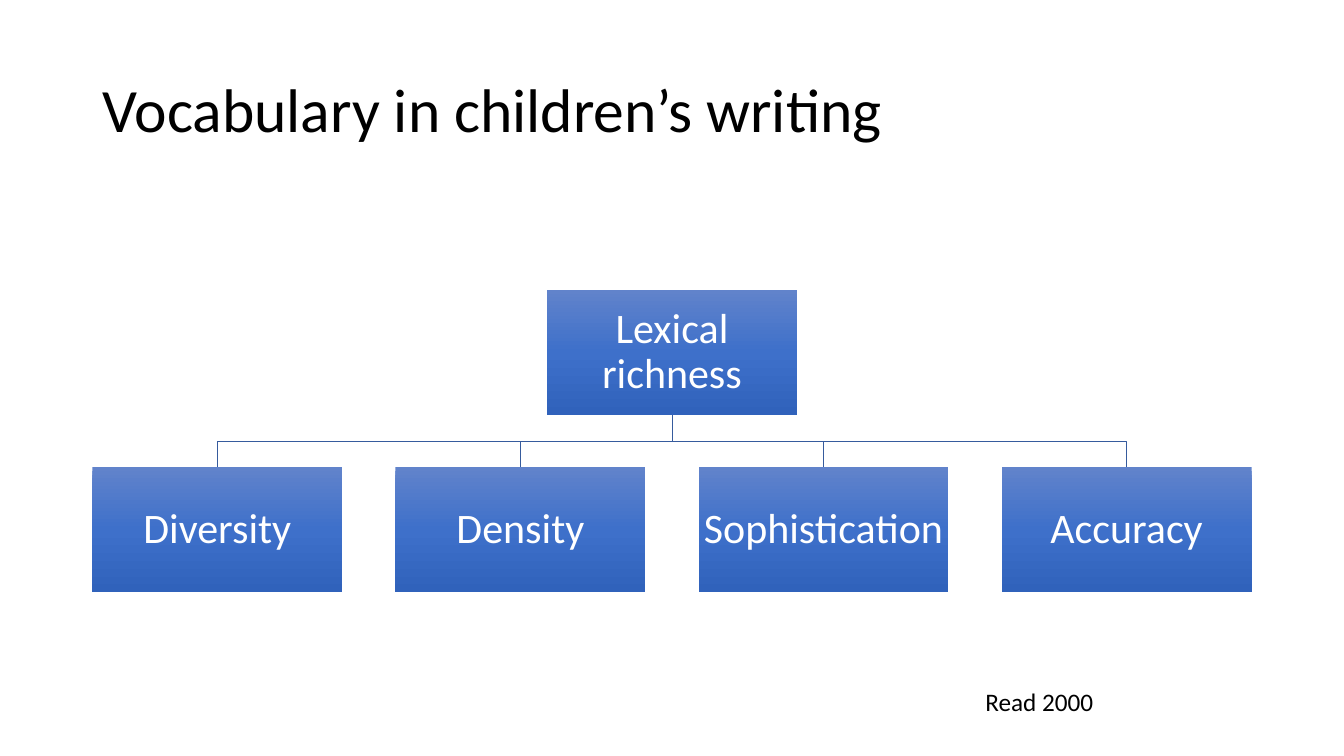
from copy import deepcopy
from dataclasses import dataclass

from pptx import Presentation
from pptx.dml.color import RGBColor
from pptx.enum.shapes import MSO_SHAPE
from pptx.enum.text import MSO_ANCHOR, PP_ALIGN
from pptx.oxml.ns import qn
from pptx.util import Pt

PX = 9525


@dataclass(frozen=True)
class Theme:
    font: str = "Calibri"
    dark: str = "000000"
    light: str = "FFFFFF"
    line: str = "365B9D"
    gradient: tuple = ("6183CB", "3E70CA", "3062BB")
    title: int = 44
    node: int = 30
    source: int = 18
    line_width: float = 0.5


THEME = Theme()


def px(*lengths):
    return [round(length * PX) for length in lengths]


def write(shape, text, size, color=THEME.dark, align=PP_ALIGN.LEFT,
          anchor=MSO_ANCHOR.TOP, spacing=1.0, inset=None):
    tf = shape.text_frame
    tf.word_wrap = True
    tf.vertical_anchor = anchor
    if inset is not None:
        tf.margin_left, tf.margin_top, tf.margin_right, tf.margin_bottom = px(*[inset] * 4)
    p = tf.paragraphs[0]
    p.alignment = align
    p.line_spacing = spacing
    r = p.add_run()
    r.text = text
    r.font.name = THEME.font
    r.font.size = Pt(size)
    r.font.color.rgb = RGBColor.from_string(color)


def add_text(s, box, text, size, **fmt):
    write(s.shapes.add_textbox(*px(*box)), text, size, **fmt)


def fill_gradient(shape, colors):
    fill = shape.fill
    fill.gradient()
    fill.gradient_angle = 270
    stops = shape.element.spPr.find(qn("a:gradFill")).find(qn("a:gsLst"))
    stops.insert(1, deepcopy(stops[0]))
    for i, (stop, color) in enumerate(zip(fill.gradient_stops, colors)):
        stop.position = i / (len(colors) - 1)
        stop.color.rgb = RGBColor.from_string(color)


def add_node(s, box, text):
    sp = s.shapes.add_shape(MSO_SHAPE.RECTANGLE, *px(*box))
    sp.shadow.inherit = False
    sp.line.fill.background()
    fill_gradient(sp, THEME.gradient)
    write(sp, text, THEME.node, color=THEME.light, align=PP_ALIGN.CENTER,
          anchor=MSO_ANCHOR.MIDDLE, spacing=0.9, inset=2)


def add_branch(s, start, end):
    (x1, y1), (x2, y2) = start, end
    middle = (y1 + y2) / 2
    builder = s.shapes.build_freeform(*px(x1, y1))
    points = [(x1, middle), (x2, middle), (x2, y2)]
    builder.add_line_segments([px(*point) for point in points], close=False)
    sp = builder.convert_to_shape()
    sp.shadow.inherit = False
    sp.fill.background()
    sp.line.color.rgb = RGBColor.from_string(THEME.line)
    sp.line.width = Pt(THEME.line_width)


def add_hierarchy(s, box, root, children, node_w=238, node_h=119):
    left, top, width, height = box
    center = left + width / 2
    child_top = top + height - node_h
    pitch = (width - node_w) / (len(children) - 1)
    lefts = [left + i * pitch for i in range(len(children))]
    for x in lefts:
        add_branch(s, (center, top + node_h), (x + node_w / 2, child_top))
    add_node(s, (center - node_w / 2, top, node_w, node_h), root)
    for x, child in zip(lefts, children):
        add_node(s, (x, child_top, node_w, node_h), child)


def main():
    prs = Presentation()
    prs.slide_width, prs.slide_height = px(1280, 720)
    s = prs.slides.add_slide(prs.slide_layouts[6])
    add_text(s, (88, 38, 1104, 139), "Vocabulary in children’s writing", THEME.title,
             anchor=MSO_ANCHOR.MIDDLE, spacing=0.9)
    add_hierarchy(s, (88, 276, 1104, 288), "Lexical richness",
                  ["Diversity", "Density", "Sophistication", "Accuracy"])
    add_text(s, (929, 649, 282, 38), "Read 2000", THEME.source)
    prs.save("out.pptx")


if __name__ == "__main__":
    main()
